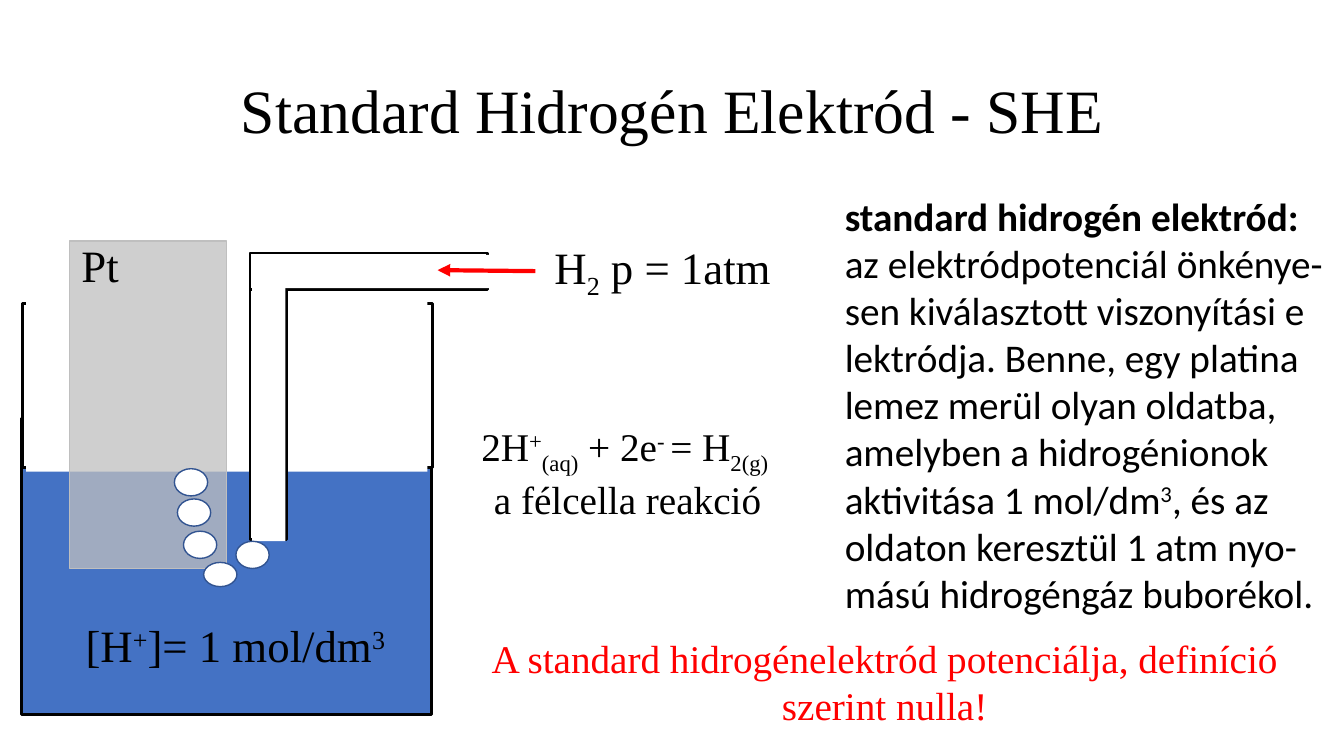
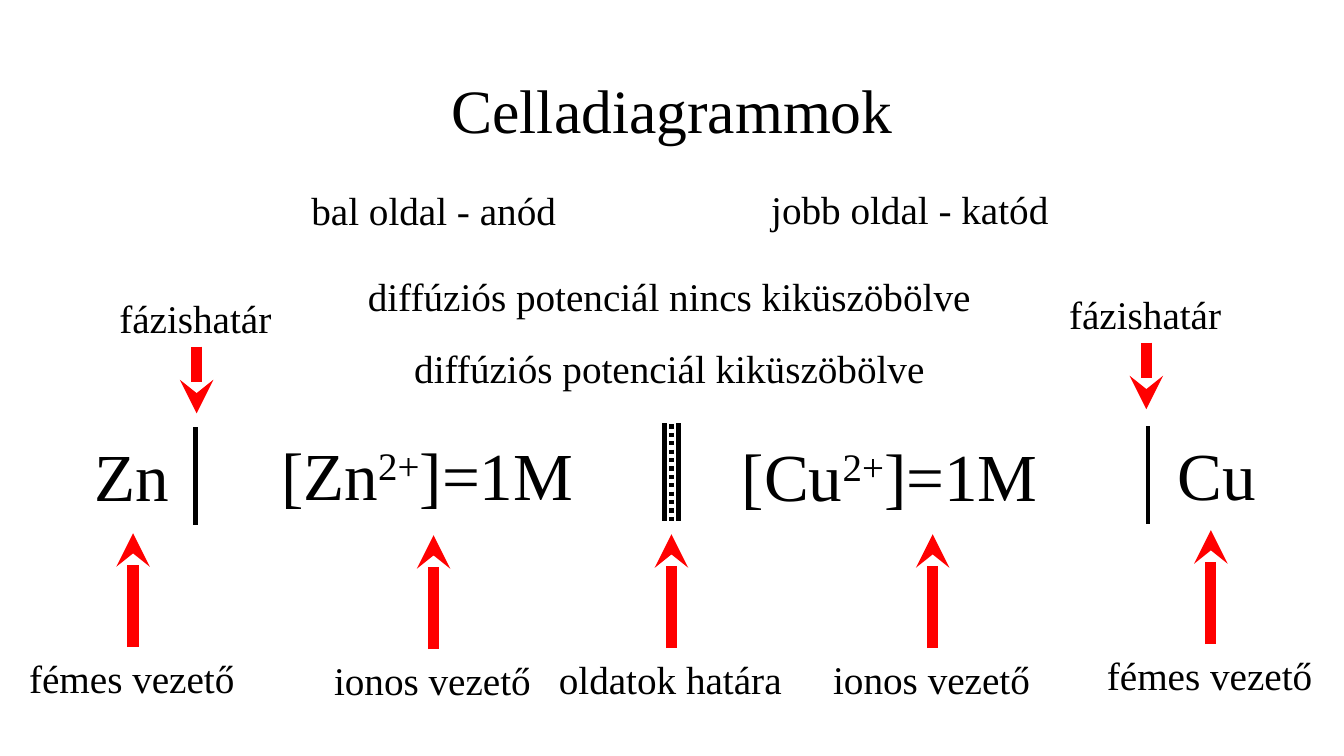
"""Builds two slides on the hydrogen electrode and on cell diagrams."""
from dataclasses import dataclass
from lxml import etree
from pptx import Presentation
from pptx import util as u
from pptx.dml.color import RGBColor
from pptx.enum import dml, shapes, text
from pptx.oxml.ns import qn

SCALE = 9144
RECT = shapes.MSO_SHAPE.RECTANGLE
OVAL = shapes.MSO_SHAPE.OVAL
CENTER = text.PP_ALIGN.CENTER
SUB, SUP = {"base": -25}, {"base": 30}


@dataclass(frozen=True)
class Theme:
    """Colours, fonts and type sizes of the deck."""
    ink: str = "000000"
    paper: str = "FFFFFF"
    accent: str = "FF0000"
    liquid: str = "4472C4"
    bubble: str = "325491"
    metal: str = "BFBFBF"
    serif: str = "Times New Roman"
    sans: str = "Calibri"
    title: int = 44
    formula: int = 48
    label: int = 32
    body: int = 28


def px(*lengths):
    """Turn px lengths into EMU."""
    return [u.Emu(round(length * SCALE)) for length in lengths]


def apply(target, values):
    """Set each named attribute on the target."""
    for name, value in values.items():
        setattr(target, name, value)


class Painter:
    """Holds the theme, the deck and the current page."""

    def __init__(self, theme):
        """Start a wide deck."""
        self.theme = theme
        self.deck = Presentation()
        self.deck.slide_width, self.deck.slide_height = px(1333, 750)
        self.page = None

    def new_page(self, title):
        """Add a page with a centred title."""
        self.page = self.deck.slides.add_slide(self.deck.slide_layouts[5])
        holder = self.page.shapes.title
        apply(holder, dict(zip(("left", "top", "width", "height"), px(92, 40, 1150, 145))))
        holder.text_frame.vertical_anchor = text.MSO_ANCHOR.MIDDLE
        para = holder.text_frame.paragraphs[0]
        apply(para, {"alignment": CENTER, "line_spacing": 0.9})
        self.spans(para, [title], self.theme.title)

    def spans(self, para, pieces, size, color=None, font=None):
        """Add pieces of text, each a string or a string with its format."""
        for piece in pieces:
            words, look = (piece, {}) if isinstance(piece, str) else piece
            for index, line in enumerate(words.split("\n")):
                if index:
                    para.add_line_break()
                if not line:
                    continue
                span = para.add_run()
                span.text = line
                apply(span.font, {"size": u.Pt(size), "name": font or self.theme.serif,
                                  "bold": look.get("bold", False)})
                span.font.color.rgb = RGBColor.from_string(color or self.theme.ink)
                if "base" in look:
                    span.font._element.set("baseline", str(look["base"] * 1000))

    def label(self, place, size, *pieces, align=None, wrap=False, **style):
        """Add a text box that fits its text."""
        box = self.page.shapes.add_textbox(*px(*place))
        apply(box.text_frame, {"word_wrap": wrap,
                               "auto_size": text.MSO_AUTO_SIZE.SHAPE_TO_FIT_TEXT})
        para = box.text_frame.paragraphs[0]
        para.alignment = align
        self.spans(para, pieces, size, **style)

    def shape(self, kind, place, fill, line=None, weight=1, alpha=None):
        """Add a filled preset shape."""
        shape = self.page.shapes.add_shape(kind, *px(*place))
        shape.shadow.inherit = False
        shape.fill.solid()
        shape.fill.fore_color.rgb = RGBColor.from_string(fill)
        if alpha:
            color = shape._element.spPr.find(".//" + qn("a:srgbClr"))
            etree.SubElement(color, qn("a:alpha"), val=str(alpha * 1000))
        if line:
            shape.line.color.rgb = RGBColor.from_string(line)
            shape.line.width = u.Pt(weight)
        else:
            shape.line.fill.background()

    def line(self, ends, color, weight, dash=None, arrow=None):
        """Add a straight line, with an arrowhead at its end if named."""
        line = self.page.shapes.add_connector(shapes.MSO_CONNECTOR.STRAIGHT, *px(*ends))
        line.line.color.rgb = RGBColor.from_string(color)
        line.line.width = u.Pt(weight)
        if dash:
            line.line.dash_style = dash
        if arrow:
            etree.SubElement(line.line._get_or_add_ln(), qn("a:tailEnd"), type=arrow)
        etree.SubElement(line._element.spPr, qn("a:effectLst"))

    def pointer(self, words, center, start, end, width):
        """Add a thick arrow with its label centred behind its start."""
        self.line((center, start, center, end), self.theme.accent, 8, arrow="stealth")
        top = start + 2 if end < start else start - 57
        self.label((center - width / 2, top, width, 57), self.theme.body, words)


def electrode_page(painter):
    """Draw the standard hydrogen electrode."""
    theme = painter.theme
    painter.new_page("Standard Hidrogén Elektród - SHE")
    for place, fill, line in (
        ((21, 415, 407, 294), theme.liquid, theme.ink),
        ((22, 301, 407, 163), theme.paper, theme.ink),
        ((26, 289, 398, 179), theme.paper, None),
        ((248, 253, 36, 282), theme.paper, theme.ink),
        ((248, 251, 236, 36), theme.paper, theme.ink),
        ((250, 280, 33, 257), theme.paper, None),
        ((250, 253, 236, 33), theme.paper, None),
    ):
        painter.shape(RECT, place, fill, line, 2)
    painter.shape(RECT, (69, 239, 156, 325), theme.metal, theme.metal, alpha=75)
    for left, top, height in ((234, 537, 27), (202, 558, 24), (182, 527, 27),
                              (176, 495, 27), (173, 465, 27)):
        painter.shape(OVAL, (left, top, 33, height), theme.paper, theme.bubble)
    painter.line((531, 269, 434, 268), theme.accent, 3, arrow="triangle")
    painter.label((71, 231, 58, 64), theme.label, "Pt")
    painter.label((540, 233, 239, 64), theme.label, "H", ("2", SUB), " p = 1atm")
    painter.label((75, 608, 331, 64), theme.label,
                  "[H", ("+", SUP), "]= 1 mol/dm", ("3", SUP))
    painter.label((456, 414, 333, 104), theme.body,
                  "2H", ("+", SUP), ("(aq)", SUB), " + 2e", ("- ", SUP), "= H",
                  ("2(g) \n", SUB), "a félcella reakció", align=CENTER)
    painter.label((469, 624, 817, 104), theme.body,
                  "A standard hidrogénelektród potenciálja, definíció\nszerint nulla!",
                  align=CENTER, color=theme.accent)
    painter.label((828, 186, 499, 434), theme.body,
                  ("standard hidrogén elektród:\n", {"bold": True}),
                  "az elektródpotenciál önkénye-\nsen kiválasztott viszonyítási e\n"
                  "lektródja. Benne, egy platina\nlemez merül olyan oldatba,\n"
                  "amelyben a hidrogénionok\naktivitása 1 mol/dm", ("3", SUP),
                  ", és az\noldaton keresztül 1 atm nyo-\nmású hidrogéngáz buborékol.",
                  wrap=True, font=theme.sans)


def cell_page(painter):
    """Draw the parts of a cell diagram."""
    theme = painter.theme
    painter.new_page("Celladiagrammok")
    for words, left, top, width in (
        ("bal oldal - anód", 299, 180, 265),
        ("jobb oldal - katód", 755, 179, 298),
        ("diffúziós potenciál nincs kiküszöbölve", 355, 265, 624),
        ("diffúziós potenciál kiküszöbölve", 401, 337, 531),
    ):
        painter.label((left, top, width, 57), theme.body, words)
    for left, top, width, pieces in (
        (84, 426, 95, ["Zn"]),
        (269, 425, 319, ["[Zn", ("2+", SUP), "]=1M"]),
        (726, 426, 323, ["[Cu", ("2+", SUP), "]=1M"]),
        (1158, 425, 99, ["Cu"]),
    ):
        painter.label((left, top, width, 91), theme.formula, *pieces)
    for left, top, dash in ((194, 424, None), (659, 420, None),
                            (666, 421, dml.MSO_LINE.ROUND_DOT),
                            (673, 420, None), (1139, 423, None)):
        painter.line((left, top, left, top + 97), theme.ink, 3, dash)
    for words, center, start, end, width in (
        ("fázishatár", 195, 344, 410, 173),
        ("fázishatár", 1137, 340, 406, 173),
        ("fémes vezető", 132, 642, 529, 226),
        ("ionos vezető", 430, 644, 531, 217),
        ("oldatok határa", 666, 643, 530, 243),
        ("ionos vezető", 925, 643, 530, 217),
        ("fémes vezető", 1201, 639, 526, 226),
    ):
        painter.pointer(words, center, start, end, width)


def main():
    """Build and save the deck."""
    painter = Painter(Theme())
    electrode_page(painter)
    cell_page(painter)
    painter.deck.save("out.pptx")


if __name__ == "__main__":
    main()
